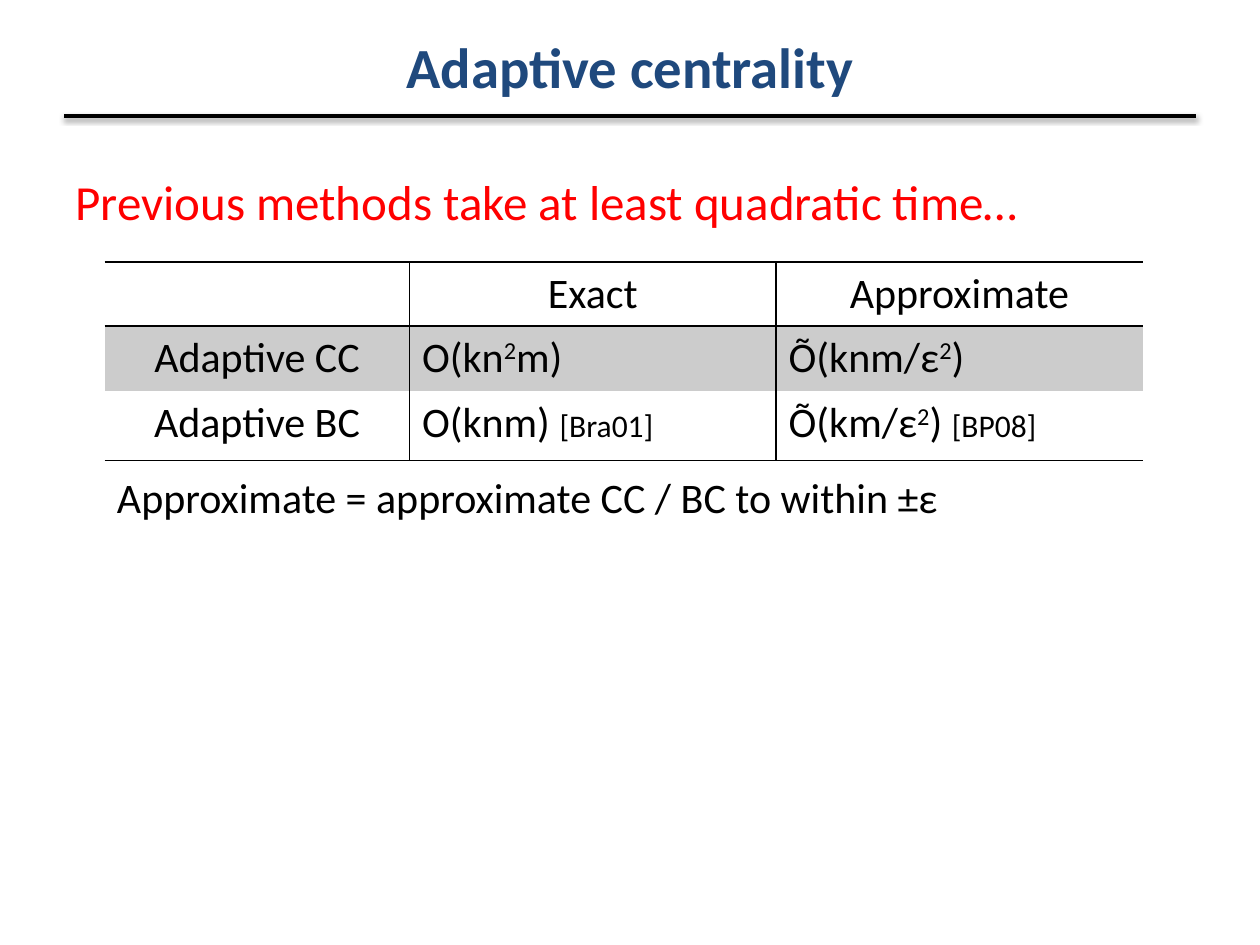
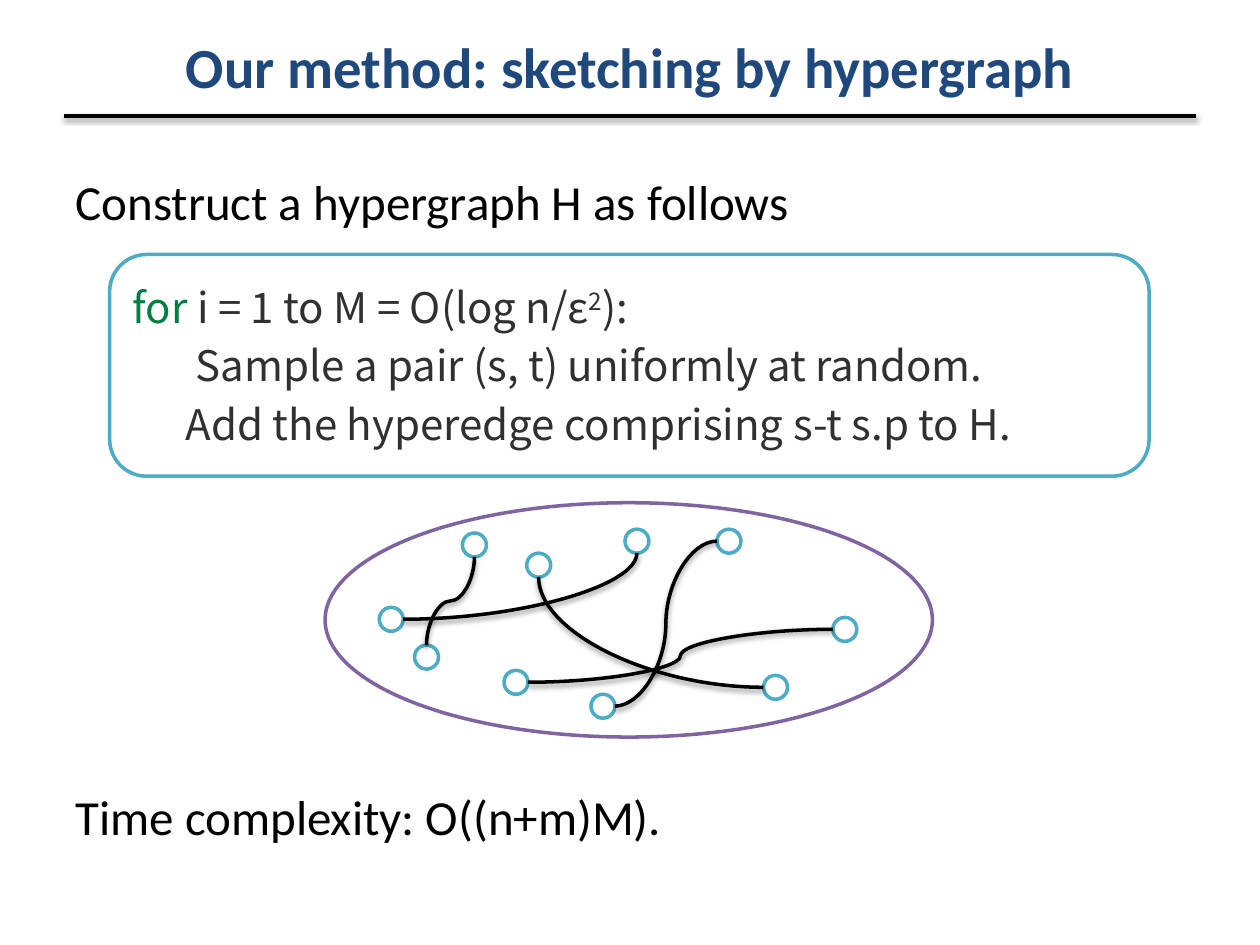
"""Build two slides on adaptive centrality and hypergraph sketching."""
from dataclasses import dataclass
from typing import NamedTuple

from lxml.etree import SubElement
from pptx import Presentation
from pptx.dml.color import RGBColor
from pptx.enum.shapes import MSO_CONNECTOR, MSO_SHAPE
from pptx.enum.text import MSO_ANCHOR, MSO_AUTO_SIZE, PP_ALIGN
from pptx.oxml.ns import qn
from pptx.util import Emu, Pt


@dataclass(frozen=True)
class Theme:
    """Hold the colours, fonts and type sizes."""
    navy: str = "1F497D"
    black: str = "000000"
    white: str = "FFFFFF"
    red: str = "FF0000"
    teal: str = "4BACC6"
    purple: str = "8064A2"
    green: str = "008040"
    ink: str = "303030"
    band: str = "CCCCCC"
    font: str = "Calibri"
    code: str = "Noto Sans CJK JP"
    head: float = 32.4
    body: float = 28
    text: float = 24
    cite: float = 18
    line: float = 2
    rule: float = 1


class Box(NamedTuple):
    """Give a place in px."""
    left: float
    top: float
    width: float
    height: float


class Run(NamedTuple):
    """Give a piece of text and its look."""
    text: str
    size: float
    tint: str
    font: str
    bold: bool = False
    raised: bool = False


class Edge(NamedTuple):
    """Join two nodes of the graph at numbered sites."""
    start: int
    out: int
    end: int
    into: int


T = Theme()
SCALE = 9144
TOP, LEFT, BOTTOM, RIGHT = 0, 2, 4, 6
SITES = {TOP: (0.5, 0), LEFT: (0, 0.5), BOTTOM: (0.5, 1), RIGHT: (1, 0.5)}
NODE = 19
NODES = [(301, 482), (496, 420), (661, 490), (400, 532), (418, 439),
         (606, 536), (569, 420), (469, 551), (367, 423), (329, 512)]
EDGES = [Edge(0, RIGHT, 1, BOTTOM), Edge(3, RIGHT, 2, LEFT),
         Edge(5, LEFT, 4, BOTTOM), Edge(7, RIGHT, 6, LEFT),
         Edge(9, TOP, 8, BOTTOM)]
PLAIN = "{2D5ABB26-0587-4C30-8999-92F81FD0307C}"


def px(size: float) -> Emu:
    """Turn px into EMU."""
    return Emu(round(size * SCALE))


def place(box: Box) -> list[Emu]:
    """Turn a box into EMU."""
    return [px(size) for size in box]


def plain(text: str, size: float = T.text, tint: str = T.black) -> Run:
    """Make a run in the main font."""
    return Run(text, size, tint, T.font)


def high(text: str) -> Run:
    """Make a raised run for the table."""
    return plain(text)._replace(raised=True)


def code(text: str, tint: str = T.ink, raised: bool = False) -> Run:
    """Make a run in the code font."""
    return Run(text, T.text, tint, T.code, raised=raised)


def write(para, runs: list[Run]) -> None:
    """Add runs to a paragraph."""
    for item in runs:
        run = para.add_run()
        run.text = item.text
        font = run.font
        font.name, font.size, font.bold = item.font, Pt(item.size), item.bold
        font.color.rgb = RGBColor.from_string(item.tint)
        if item.raised:
            font._element.set("baseline", "30000")


def lines(frame, rows: list[list[Run]]) -> list:
    """Write one paragraph per row and return them."""
    paras = [frame.paragraphs[0]] + [frame.add_paragraph() for _ in rows[1:]]
    for para, runs in zip(paras, rows):
        write(para, runs)
    return paras


def shade(line) -> None:
    """Give a line its weight, colour and soft shadow."""
    line.line.width = Pt(T.line)
    line.line.color.rgb = RGBColor.from_string(T.black)
    glow = SubElement(SubElement(line.element.spPr, qn("a:effectLst")), qn("a:outerShdw"),
                      blurRad="40000", dist="20000", dir="5400000", rotWithShape="0")
    SubElement(SubElement(glow, qn("a:srgbClr"), val=T.black), qn("a:alpha"), val="38000")


def shape(slide, kind: MSO_SHAPE, box: Box, edge: str):
    """Draw a white shape with a coloured edge."""
    form = slide.shapes.add_shape(kind, *place(box))
    form.shadow.inherit = False
    form.fill.solid()
    form.fill.fore_color.rgb = RGBColor.from_string(T.white)
    form.line.color.rgb = RGBColor.from_string(edge)
    form.line.width = Pt(T.line)
    return form


def start(deck, title: str, rows: list[list[Run]]):
    """Add a slide with its rule, title and body; return it with the body lines."""
    slide = deck.slides.add_slide(deck.slide_layouts[1])
    shade(slide.shapes.add_connector(MSO_CONNECTOR.STRAIGHT, *place(Box(51, 92, 949, 92))))
    head, body = slide.shapes.title, slide.placeholders[1]
    for holder, box in ((head, Box(50, 22, 900, 61)), (body, Box(50, 131, 900, 539))):
        holder.left, holder.top, holder.width, holder.height = place(box)
        holder.text_frame.auto_size = MSO_AUTO_SIZE.NONE
    lines(head.text_frame, [[Run(title, T.head, T.navy, T.font, bold=True)]])
    paras = lines(body.text_frame, rows)
    for para in paras:
        props = para._p.get_or_add_pPr()
        props.set("marL", "0")
        props.set("indent", "0")
        SubElement(props, qn("a:buNone"))
    return slide, paras


def border(cell, sides: str) -> None:
    """Draw the named sides of a cell and clear the rest."""
    props = cell._tc.get_or_add_tcPr()
    for side in "LRTB":
        line = SubElement(props, qn(f"a:ln{side}"), w=str(Pt(T.rule)))
        if side in sides:
            SubElement(SubElement(line, qn("a:solidFill")), qn("a:srgbClr"), val=T.black)
        else:
            SubElement(line, qn("a:noFill"))


def grid(slide, cells: list[list[list[Run]]]) -> None:
    """Draw the table of running times."""
    wide, tall = (242, 291, 291), (50, 52, 55)
    frame = slide.shapes.add_table(3, 3, *place(Box(83, 208, sum(wide), sum(tall))))
    table = frame.table
    table.first_row = table.horz_banding = False
    frame.element.find(".//" + qn("a:tableStyleId")).text = PLAIN
    for col, size in zip(table.columns, wide):
        col.width = px(size)
    for row, size in zip(table.rows, tall):
        row.height = px(size)
    for y, row in enumerate(cells):
        for x, runs in enumerate(row):
            cell = table.cell(y, x)
            border(cell, ("", "L")[x > 0] + ("", "R")[x < 2] + ("TB", "T", "B")[y])
            if y == 1:
                cell.fill.solid()
                cell.fill.fore_color.rgb = RGBColor.from_string(T.band)
            else:
                cell.fill.background()
            para = cell.text_frame.paragraphs[0]
            para.alignment = PP_ALIGN.LEFT if x and y else PP_ALIGN.CENTER
            write(para, runs)


def spot(node: int, site: int) -> tuple[float, float]:
    """Find a site of a node."""
    return tuple(at + NODE * part for at, part in zip(NODES[node], SITES[site]))


def join(slide, forms: list, edge: Edge) -> None:
    """Draw a curve glued to two nodes."""
    (ax, ay), (bx, by) = spot(edge.start, edge.out), spot(edge.end, edge.into)
    turn = edge.out == TOP
    if turn:
        mx, my, dx, dy = (ax + bx) / 2, (ay + by) / 2, (ax - bx) / 2, (ay - by) / 2
        ax, ay, bx, by = mx + dy, my - dx, mx - dy, my + dx
    line = slide.shapes.add_connector(MSO_CONNECTOR.CURVE, *place(Box(ax, ay, bx, by)))
    props = line.element.spPr
    if turn:
        props.find(qn("a:xfrm")).set("rot", "5400000")
    elif edge.into == BOTTOM:
        props.find(qn("a:prstGeom")).set("prst", "curvedConnector2")
    glue = line.element.find(".//" + qn("p:cNvCxnSpPr"))
    for tag, node, site in (("a:stCxn", edge.start, edge.out), ("a:endCxn", edge.end, edge.into)):
        SubElement(glue, qn(tag), id=str(forms[node].shape_id), idx=str(site))
    shade(line)


def costs(deck) -> None:
    """Build the slide on earlier methods."""
    slide, _ = start(deck, "Adaptive centrality",
                     [[plain("Previous methods take at least quadratic time…", T.body, T.red)]])
    grid(slide, [
        [[], [plain("Exact")], [plain("Approximate")]],
        [[plain("Adaptive CC")],
         [plain("O(kn"), high("2"), plain("m)")],
         [plain("Õ(knm/ε"), high("2"), plain(")")]],
        [[plain("Adaptive BC")],
         [plain("O(knm) "), plain("[Bra01]", T.cite)],
         [plain("Õ(km/ε"), high("2"), plain(") "), plain("[BP08]", T.cite)]],
    ])
    note = slide.shapes.add_textbox(*place(Box(83, 369, 682, 50))).text_frame
    note.word_wrap = False
    lines(note, [[plain("Approximate = approximate CC / BC to within ±ε")]])


def sketch(deck) -> None:
    """Build the slide on the hypergraph method."""
    slide, paras = start(deck, "Our method: sketching by hypergraph",
                         [[plain("Construct a hypergraph H as follows", T.body)],
                          [plain("Time complexity: O((n+m)M).", T.body)]])
    paras[1].space_before = Pt(318)
    shape(slide, MSO_SHAPE.OVAL, Box(258, 399, 482, 186), T.purple)
    forms = [shape(slide, MSO_SHAPE.OVAL, Box(*node, NODE, NODE), T.teal) for node in NODES]
    for edge in EDGES:
        join(slide, forms, edge)
    frame = shape(slide, MSO_SHAPE.ROUNDED_RECTANGLE, Box(87, 202, 825, 176), T.teal).text_frame
    frame.word_wrap = True
    frame.vertical_anchor = MSO_ANCHOR.MIDDLE
    steps = lines(frame, [
        [code("for ", T.green), code("i = 1 to M = O(log n/ε"), code("2", raised=True), code("):")],
        [code("Sample a pair (s, t) uniformly at random.")],
        [code("Add the hyperedge comprising s-t s.p to H.")],
    ])
    for step, inset in zip(steps, (0, 50, 42)):
        step.alignment = PP_ALIGN.LEFT
        step.space_before, step.line_spacing = Pt(4.8), Pt(28.6)
        step._p.get_or_add_pPr().set("marL", str(px(inset)))


def main() -> None:
    """Build and save the deck."""
    deck = Presentation()
    deck.slide_width, deck.slide_height = px(1000), px(750)
    costs(deck)
    sketch(deck)
    deck.save("out.pptx")


if __name__ == "__main__":
    main()
